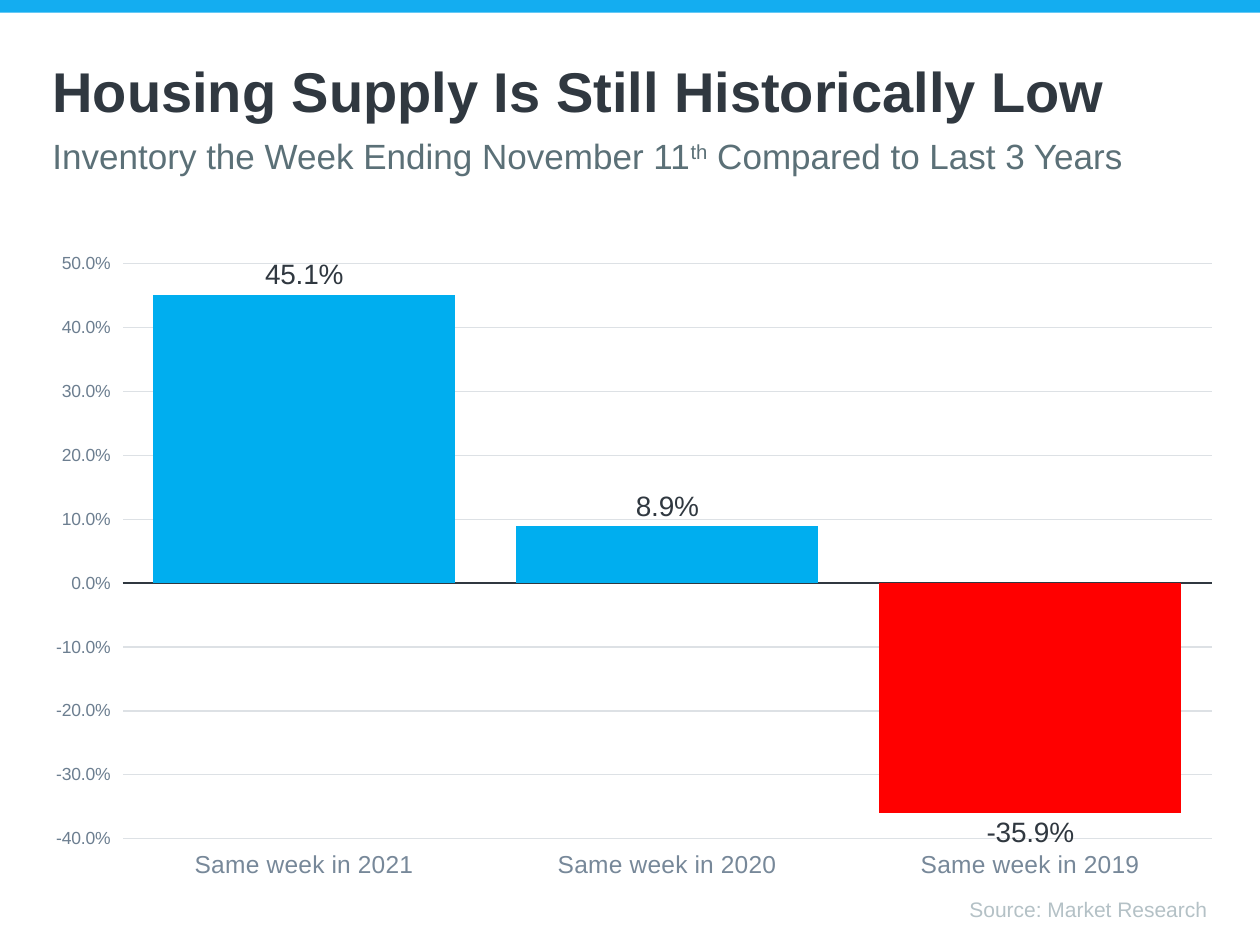
from dataclasses import dataclass

from lxml import etree
from pptx import Presentation
from pptx.chart.data import CategoryChartData
from pptx.dml.color import RGBColor
from pptx.enum import chart as ce, shapes, text
from pptx.oxml import ns
from pptx.util import Pt


@dataclass(frozen=True)
class Theme:
    font: str = "Arial"
    bar: str = "14ADF0"
    ink: str = "303840"
    subtitle: str = "5B7077"
    source: str = "B4C1C6"
    category: str = "778899"
    scale: str = "6C7E90"
    grid: str = "DDE1E5"
    gain: str = "00AEEF"
    loss: str = "FF0000"
    title_size: int = 32
    subtitle_size: int = 20
    source_size: int = 12
    category_size: int = 14
    scale_size: int = 10
    label_size: int = 16


THEME = Theme()
PERCENT = "0.0%"


def apply(target, values):
    for name, value in values.items():
        setattr(target, name, value)


def style_font(font, size, color, bold=False):
    apply(font, {"name": THEME.font, "size": Pt(size), "bold": bold})
    font.color.rgb = RGBColor.from_string(color)


def paint(fill, color):
    fill.solid()
    fill.fore_color.rgb = RGBColor.from_string(color)


def draw_line(line, color, width):
    line.width = Pt(width)
    paint(line.fill, color)


def add_band(page, width, height):
    band = page.shapes.add_shape(shapes.MSO_SHAPE.RECTANGLE, 0, 0, Pt(width), Pt(height))
    band.shadow.inherit = False
    paint(band.fill, THEME.bar)
    band.line.fill.background()


def add_text(page, place, pieces, size, color, bold=False, inset=0, para_format=None):
    box = page.shapes.add_textbox(*map(Pt, place))
    apply(box.text_frame, {
        "word_wrap": True,
        "vertical_anchor": text.MSO_ANCHOR.TOP,
        "margin_left": 0,
        "margin_right": 0,
        "margin_top": Pt(inset),
        "margin_bottom": Pt(inset),
    })
    para = box.text_frame.paragraphs[0]
    apply(para, para_format or {})
    for words, raised in pieces:
        span = para.add_run()
        span.text = words
        style_font(span.font, size, color, bold)
        if raised:
            span.font._element.set("baseline", "30000")


def place_plot(chart, x, y, w, h):
    area = chart._chartSpace.chart.plotArea
    for old in area.findall(ns.qn("c:layout")):
        area.remove(old)
    layout = etree.Element(ns.qn("c:layout"))
    manual = etree.SubElement(layout, ns.qn("c:manualLayout"))
    settings = {"layoutTarget": "inner", "xMode": "edge", "yMode": "edge",
                "x": x, "y": y, "w": w, "h": h}
    for name, value in settings.items():
        etree.SubElement(manual, ns.qn(f"c:{name}")).set("val", str(value))
    area.insert(0, layout)


def style_axes(chart):
    category, scale = chart.category_axis, chart.value_axis
    apply(category, {
        "tick_label_position": ce.XL_TICK_LABEL_POSITION.LOW,
        "major_tick_mark": ce.XL_TICK_MARK.NONE,
        "has_major_gridlines": False,
    })
    style_font(category.tick_labels.font, THEME.category_size, THEME.category)
    draw_line(category.format.line, THEME.ink, 1)

    apply(scale, {
        "minimum_scale": -0.4,
        "maximum_scale": 0.5,
        "major_unit": 0.1,
        "major_tick_mark": ce.XL_TICK_MARK.OUTSIDE,
        "has_major_gridlines": True,
    })
    apply(scale.tick_labels, {"number_format": PERCENT, "number_format_is_linked": False})
    style_font(scale.tick_labels.font, THEME.scale_size, THEME.scale)
    scale.format.line.fill.background()
    draw_line(scale.major_gridlines.format.line, THEME.grid, 0.75)


def add_column_chart(page, place, changes):
    data = CategoryChartData(number_format=PERCENT)
    data.categories = list(changes)
    data.add_series("Series 1", list(changes.values()))
    chart = page.shapes.add_chart(
        ce.XL_CHART_TYPE.COLUMN_CLUSTERED, *map(Pt, place), data).chart
    apply(chart, {"has_legend": False, "has_title": False})
    style_font(chart.font, THEME.scale_size, THEME.ink)
    place_plot(chart, 0.076, 0.03, 0.908, 0.888)
    style_axes(chart)

    plot = chart.plots[0]
    apply(plot, {"gap_width": 20, "overlap": -27,
                 "vary_by_categories": False, "has_data_labels": True})
    apply(plot.data_labels, {
        "show_value": True,
        "position": ce.XL_LABEL_POSITION.OUTSIDE_END,
        "number_format": PERCENT,
        "number_format_is_linked": False,
    })
    style_font(plot.data_labels.font, THEME.label_size, THEME.ink)

    series = plot.series[0]
    series.invert_if_negative = False
    for index, change in enumerate(changes.values()):
        paint(series.points[index].format.fill, THEME.gain if change > 0 else THEME.loss)


def main():
    deck = Presentation()
    apply(deck, {"slide_width": Pt(720), "slide_height": Pt(540)})
    page = deck.slides.add_slide(deck.slide_layouts[6])

    left, width = 30, 660
    add_band(page, 720, 7.2)
    add_text(page, (left, 510.5, width, 17.3), [("Source: Market Research", False)],
             THEME.source_size, THEME.source, inset=3.6,
             para_format={"alignment": text.PP_ALIGN.RIGHT, "line_spacing": 0.9})
    add_text(page, (left, 32.5, width, 28), [("Housing Supply Is Still Historically Low", False)],
             THEME.title_size, THEME.ink, bold=True)
    add_text(page, (left, 77, width, 24.5),
             [("Inventory the Week Ending November 11", False), ("th", True),
              (" Compared to Last 3 Years", False)],
             THEME.subtitle_size, THEME.subtitle)
    add_column_chart(page, (18, 139.7, 685.4, 370), {
        "Same week in 2021": 0.451,
        "Same week in 2020": 0.089,
        "Same week in 2019": -0.359,
    })
    deck.save("out.pptx")


if __name__ == "__main__":
    main()
